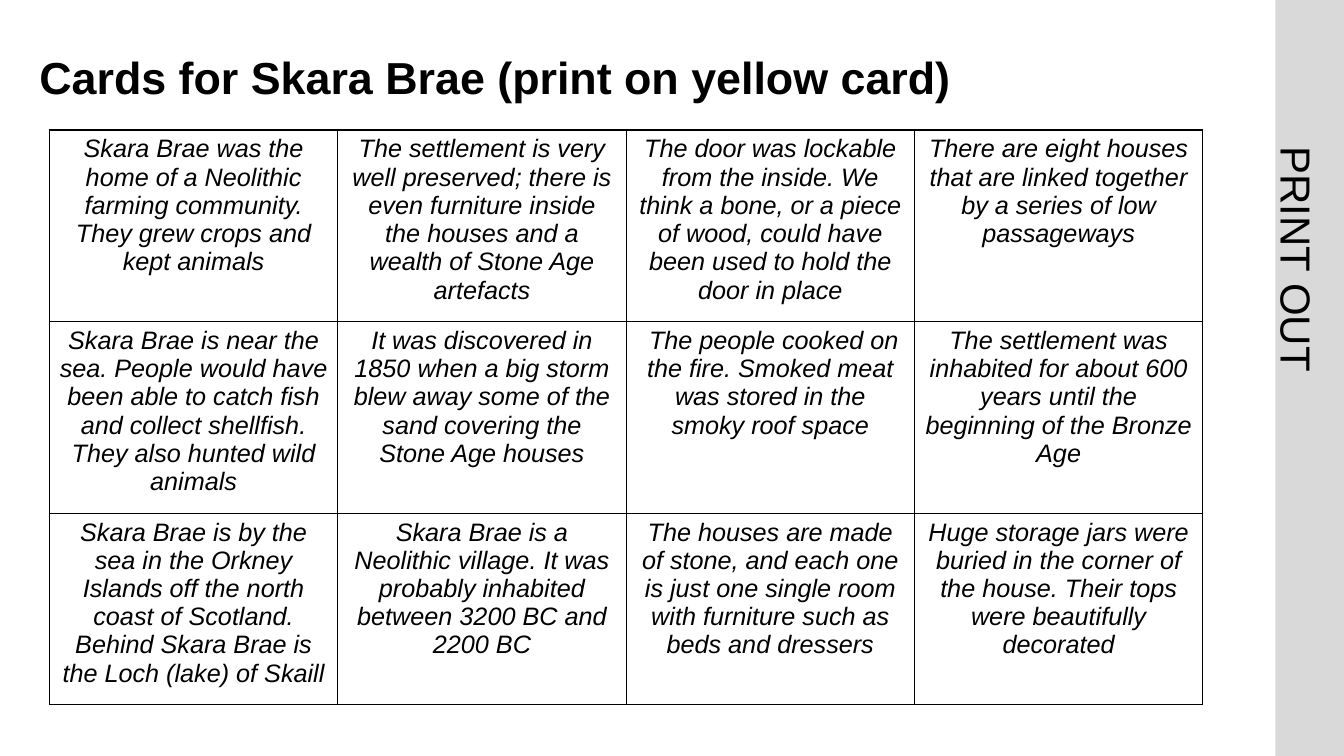
import pptx
import pptx.util
import pptx.dml.color
import pptx.enum.shapes
import pptx.enum.text
import pptx.oxml
import pptx.oxml.ns

Inches, Pt = pptx.util.Inches, pptx.util.Pt
RGBColor = pptx.dml.color.RGBColor
PP_ALIGN = pptx.enum.text.PP_ALIGN

TITLE = "Cards for Skara Brae (print on yellow card)"
SIDE_LABEL = "PRINT OUT"
CARDS = [
    [
        "Skara Brae was the home of a Neolithic farming community. They grew crops and kept animals",
        "The settlement is very well preserved; there is even furniture inside the houses "
        "and a wealth of Stone Age artefacts",
        "The door was lockable from the inside. We think a bone, or a piece of wood, "
        "could have been used to hold the door in place",
        "There are eight houses that are linked together by a series of low passageways",
    ],
    [
        "Skara Brae is near the sea. People would have been able to catch fish "
        "and collect shellfish. They also hunted wild animals",
        "It was discovered in 1850 when a big storm blew away some of the sand "
        "covering the Stone Age houses",
        " The people cooked on the fire. Smoked meat was stored in the smoky roof space",
        "The settlement was inhabited for about 600 years until the beginning of the Bronze Age",
    ],
    [
        "Skara Brae is by the sea in the Orkney Islands off the north coast of Scotland.\n"
        "Behind Skara Brae is the Loch (lake) of Skaill",
        "Skara Brae is a Neolithic village. It was probably inhabited between 3200 BC and 2200 BC",
        "The houses are made of stone, and each one is just one single room "
        "with furniture such as beds and dressers",
        "Huge storage jars were buried in the corner of the house. Their tops were beautifully decorated",
    ],
]


class Theme:
    font = "Arial"
    ink = RGBColor(0x00, 0x00, 0x00)
    band = RGBColor(0xD9, 0xD9, 0xD9)
    title_size, label_size, card_size = Pt(32), Pt(30), Pt(18)
    border = Pt(1)


SLIDE_WIDTH, SLIDE_HEIGHT = Inches(13.33), Inches(7.5)
BAND_LEFT = Inches(12.65)
CARD_LEFT, CARD_TOP = Inches(0.49), Inches(1.29)
CARD_WIDTH, CARD_HEIGHT = Inches(2.86), Inches(1.87)


def style_paragraph(paragraph, size, bold=False, italic=False):
    font = paragraph.font
    font.name, font.size = Theme.font, size
    font.bold, font.italic = bold, italic
    font.color.rgb = Theme.ink


def add_text(slide, text, box, size, bold=False):
    shape = slide.shapes.add_textbox(*map(Inches, box))
    frame = shape.text_frame
    frame.word_wrap = True
    frame.margin_left = 0
    paragraph = frame.paragraphs[0]
    paragraph.text = text
    style_paragraph(paragraph, size, bold=bold)
    return shape


def add_side_band(slide):
    band = slide.shapes.add_shape(
        pptx.enum.shapes.MSO_SHAPE.RECTANGLE, BAND_LEFT, 0, SLIDE_WIDTH - BAND_LEFT, SLIDE_HEIGHT)
    band.shadow.inherit = False
    band.fill.solid()
    band.fill.fore_color.rgb = Theme.band
    band.line.fill.background()

    label = add_text(slide, SIDE_LABEL, (11.07, 2.21, 4.01, 0.72), Theme.label_size)
    label.rotation = 90
    frame = label.text_frame
    frame.margin_top = frame.margin_right = frame.margin_bottom = 0
    frame.auto_size = pptx.enum.text.MSO_AUTO_SIZE.SHAPE_TO_FIT_TEXT
    frame.paragraphs[0].alignment = PP_ALIGN.CENTER
    frame.paragraphs[0].line_spacing = Pt(58.8)


def add_title(slide):
    title = add_text(slide, TITLE, (0.39, 0.4, 12.03, 0.78), Theme.title_size, bold=True)
    title.text_frame.vertical_anchor = pptx.enum.text.MSO_ANCHOR.MIDDLE
    title.text_frame.paragraphs[0].line_spacing = 0.9


def outline_cell(cell):
    properties = cell._tc.get_or_add_tcPr()
    for side in ("lnL", "lnR", "lnT", "lnB"):
        properties.append(pptx.oxml.parse_xml(
            f'<a:{side} {pptx.oxml.ns.nsdecls("a")} w="{Theme.border}">'
            f'<a:solidFill><a:srgbClr val="{Theme.ink}"/></a:solidFill></a:{side}>'))


def add_cards(slide):
    row_count, column_count = len(CARDS), len(CARDS[0])
    table = slide.shapes.add_table(
        row_count, column_count, CARD_LEFT, CARD_TOP,
        CARD_WIDTH * column_count, CARD_HEIGHT * row_count).table
    table.first_row = table.horz_banding = False
    for column in table.columns:
        column.width = CARD_WIDTH
    for row, texts in zip(table.rows, CARDS):
        row.height = CARD_HEIGHT
        for cell, text in zip(row.cells, texts):
            cell.text = text
            outline_cell(cell)
            cell.fill.background()
            for paragraph in cell.text_frame.paragraphs:
                paragraph.alignment = PP_ALIGN.CENTER
                style_paragraph(paragraph, Theme.card_size, italic=True)


def main():
    presentation = pptx.Presentation()
    presentation.slide_width, presentation.slide_height = SLIDE_WIDTH, SLIDE_HEIGHT
    slide = presentation.slides.add_slide(presentation.slide_layouts[6])
    add_side_band(slide)
    add_title(slide)
    add_cards(slide)
    presentation.save("out.pptx")


if __name__ == "__main__":
    main()
